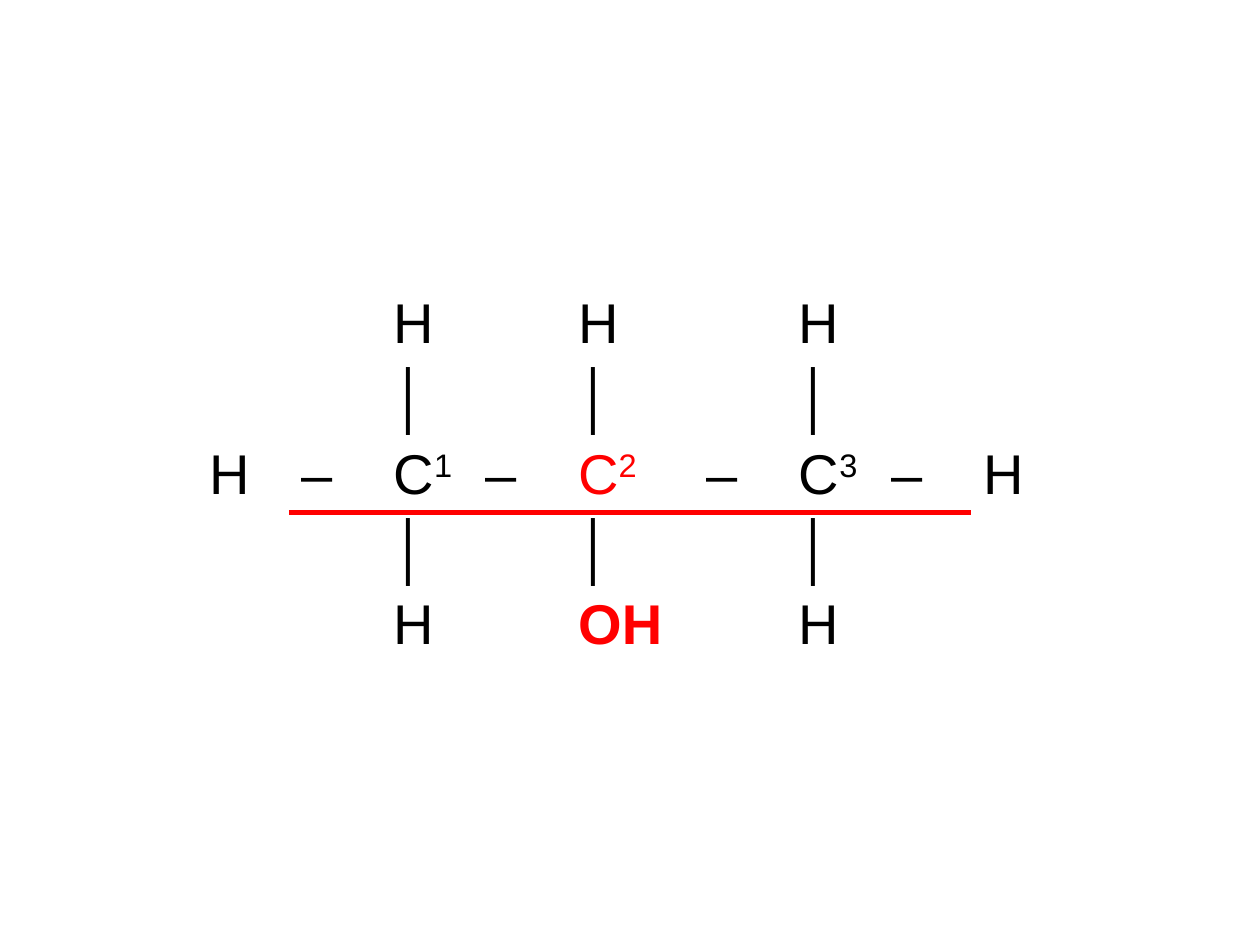
from lxml import etree
from pptx import Presentation
from pptx import util as u
from pptx.dml.color import RGBColor
from pptx.enum import text
from pptx.oxml.ns import qn

BLACK, RED = "000000", "FF0000"
ROWS, COLS = 5, 9
CHAIN_ROW, MIDDLE = 2, 4


def color(hex_value):
    return RGBColor.from_string(hex_value)


def add_run(p, content, size=32, font="Arial", fill=BLACK, bold=False, raised=0):
    r = p.add_run()
    r.text = content
    r.font.size = u.Pt(size)
    r.font.name = font
    r.font.bold = bold
    r.font.color.rgb = color(fill)
    if raised:
        r._r.get_or_add_rPr().set("baseline", str(raised * 1000))


class Molecule:
    margin_x, margin_y = u.Inches(0.1), u.Inches(0.05)
    line_width = u.Pt(3)

    def __init__(self, slide):
        self.s = slide

    def grid(self, left, top, width, height, row_height, middle_width):
        frame = self.s.shapes.add_table(
            ROWS, COLS, u.Inches(left), u.Inches(top), u.Inches(width), u.Inches(height))
        self.table = frame.table
        self.table.first_row = self.table.horz_banding = False
        side_width = (width - middle_width) / (COLS - 1)
        for i, column in enumerate(self.table.columns):
            column.width = u.Inches(middle_width if i == MIDDLE else side_width)
        for row in self.table.rows:
            row.height = u.Inches(row_height)
        frame.height = u.Inches(height)
        for cell in self.table.iter_cells():
            cell.fill.background()
            cell.margin_left = cell.margin_right = self.margin_x
            cell.margin_top = cell.margin_bottom = self.margin_y
            cell.vertical_anchor = text.MSO_ANCHOR.MIDDLE

    def symbol(self, row, col, content, number="", **style):
        p = self.table.cell(row, col).text_frame.paragraphs[0]
        add_run(p, content, **style)
        if number:
            add_run(p, number, raised=30, **style)

    def borders(self, row, col, **side_colors):
        tc_pr = self.table.cell(row, col)._tc.get_or_add_tcPr()
        for i, side in enumerate("LRTB"):
            ln = etree.Element(qn(f"a:ln{side}"))
            if side in side_colors:
                ln.set("w", str(self.line_width))
                fill = etree.SubElement(ln, qn("a:solidFill"))
                etree.SubElement(fill, qn("a:srgbClr"), val=side_colors[side])
            else:
                etree.SubElement(ln, qn("a:noFill"))
            tc_pr.insert(i, ln)


def main():
    prs = Presentation()
    prs.slide_width, prs.slide_height = u.Inches(10), u.Inches(7.5)
    molecule = Molecule(prs.slides.add_slide(prs.slide_layouts[6]))
    molecule.grid(1.56, 2.27, 6.88, 3.17, row_height=0.47, middle_width=1.02)

    for number, col in enumerate((2, MIDDLE, 6), start=1):
        is_alcohol = col == MIDDLE
        accent = RED if is_alcohol else BLACK
        molecule.symbol(0, col, "H")
        molecule.symbol(1, col, "│")
        molecule.symbol(CHAIN_ROW, col, "C", str(number), fill=accent)
        molecule.symbol(3, col, "│")
        molecule.symbol(4, col, "OH" if is_alcohol else "H", fill=accent, bold=is_alcohol)

    for col in (0, COLS - 1):
        molecule.symbol(CHAIN_ROW, col, "H")
    for col in range(1, COLS, 2):
        molecule.symbol(CHAIN_ROW, col, "–")

    underlined = {CHAIN_ROW: {"B": RED}, CHAIN_ROW + 1: {"T": RED}}
    for row in range(ROWS):
        for col in range(COLS):
            inner = 0 < col < COLS - 1
            molecule.borders(row, col, **(underlined.get(row, {}) if inner else {}))

    prs.save("out.pptx")


if __name__ == "__main__":
    main()
